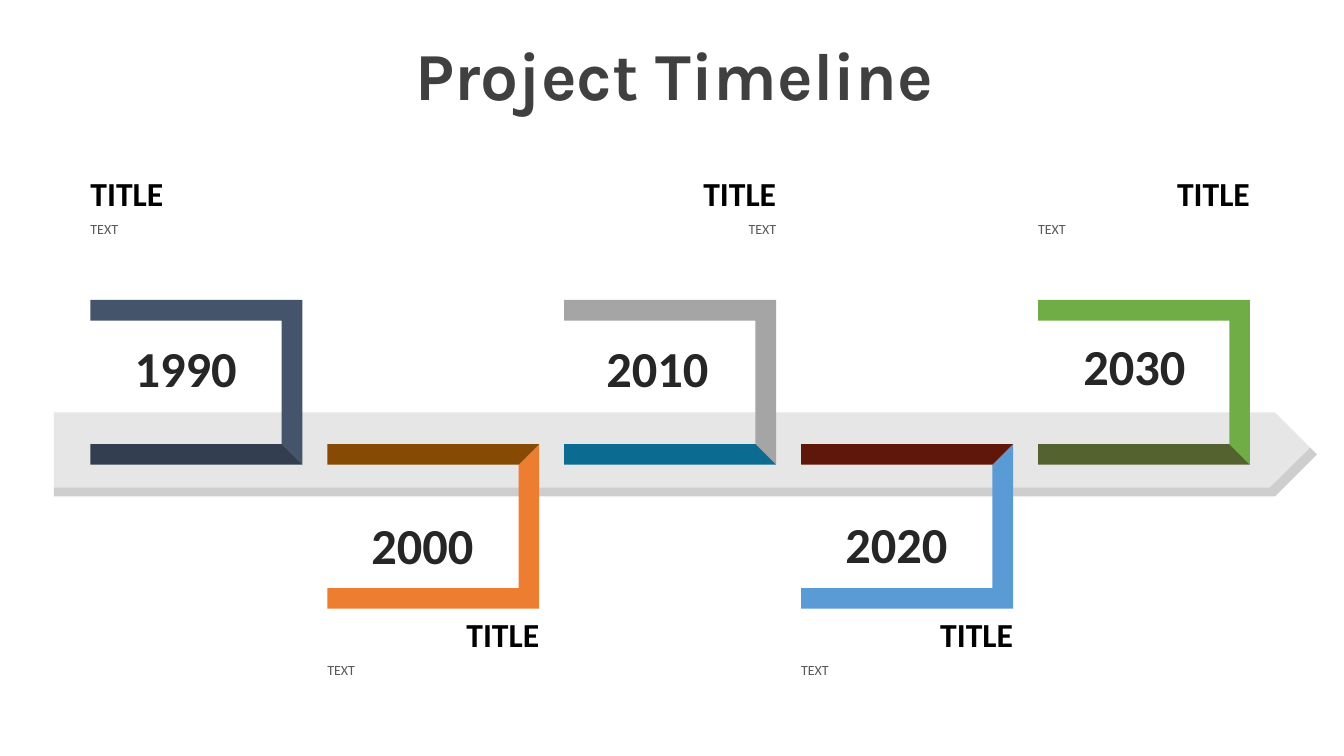
"""Build a project timeline slide with five folded brackets on an arrow."""
from lxml.etree import SubElement
from pptx import Presentation
from pptx.dml.color import RGBColor
from pptx.enum.shapes import MSO_SHAPE
from pptx.enum.text import MSO_ANCHOR, MSO_AUTO_SIZE, PP_ALIGN
from pptx.oxml.ns import qn
from pptx.util import Cm, Pt

COLORS = {
    "arrow": "E7E6E6", "shade": "000000", "heading": "000000",
    "title": "404040", "year": "262626", "body": "595959",
    "navy": "44546A", "navy_fold": "333F50",
    "orange": "ED7D31", "orange_fold": "864A04",
    "gray": "A5A5A5", "gray_fold": "0C6B90",
    "blue": "5B9BD5", "blue_fold": "60170B",
    "green": "70AD47", "green_fold": "53622E",
}
LEFT, RIGHT = PP_ALIGN.LEFT, PP_ALIGN.RIGHT
CENTER, JUSTIFY = PP_ALIGN.CENTER, PP_ALIGN.JUSTIFY

prs = Presentation()
prs.slide_width, prs.slide_height = Cm(33.87), Cm(19.05)
s = prs.slides.add_slide(prs.slide_layouts[5])


def add_text(text, at, sp=None, size=10, color="body", bold=False, font="Calibri",
             align=LEFT, anchor=MSO_ANCHOR.TOP, inset=0.0):
    """Write one line of text into a shape, or into a new text box."""
    box = [Cm(v) for v in at]
    if sp is None:
        sp = s.shapes.add_textbox(*box)
    sp.left, sp.top, sp.width, sp.height = box
    tf = sp.text_frame
    tf.word_wrap, tf.auto_size = True, MSO_AUTO_SIZE.NONE
    tf.vertical_anchor = anchor
    tf.margin_left = tf.margin_right = Cm(inset)
    tf.margin_top = tf.margin_bottom = Cm(0.13)
    p = tf.paragraphs[0]
    p.alignment = align
    r = p.add_run()
    r.text = text
    r.font.name, r.font.size, r.font.bold = font, Pt(size), bold
    r.font.color.rgb = RGBColor.from_string(COLORS[color])


def add_polygon(points, color):
    """Draw a filled closed outline through points in centimetres."""
    start, *rest = [(Cm(x), Cm(y)) for x, y in points]
    builder = s.shapes.build_freeform(*start, scale=1.0)
    builder.add_line_segments(rest, close=True)
    sp = builder.convert_to_shape()
    sp.shadow.inherit = False
    sp.fill.solid()
    sp.fill.fore_color.rgb = RGBColor.from_string(COLORS[color])
    sp.line.fill.background()
    return sp


add_text("Project Timeline", (3.61, 0.71, 26.77, 2.31), sp=s.shapes.title, size=48,
         color="title", bold=True, font="Karla", align=CENTER, inset=0.25)

arrow = s.shapes.add_shape(MSO_SHAPE.PENTAGON, Cm(1.36), Cm(10.39), Cm(31.83), Cm(2.12))
arrow.shadow.inherit = False
arrow.fill.solid()
arrow.fill.fore_color.rgb = RGBColor.from_string(COLORS["arrow"])
arrow.line.fill.background()

shade = add_polygon([(33.02, 11.28), (33.19, 11.45), (32.13, 12.51),
                     (1.36, 12.51), (1.36, 12.29), (32, 12.29)], "shade")
SubElement(shade.element.find(".//" + qn("a:srgbClr")), qn("a:alpha"), val="10000")

FIRST_X, PITCH = 2.28, 5.97
WIDTH, HEIGHT, BAR = 5.34, 4.15, 0.52
FOLD_TOP = 11.19
FOLD_BOTTOM = FOLD_TOP + BAR

milestones = [
    ("1990", "navy", LEFT, JUSTIFY, 3.12, 8.36),
    ("2000", "orange", RIGHT, JUSTIFY, 9.09, 12.83),
    ("2010", "gray", RIGHT, RIGHT, 15.01, 8.36),
    ("2020", "blue", RIGHT, JUSTIFY, 21.03, 12.8),
    ("2030", "green", RIGHT, JUSTIFY, 27.03, 8.31),
]
for i, (year, color, heading_align, body_align, year_x, year_y) in enumerate(milestones):
    x = FIRST_X + i * PITCH
    right = x + WIDTH
    inner = right - BAR
    if i % 2 == 0:
        heading_y = 4.24
        near, far, step = FOLD_BOTTOM, FOLD_BOTTOM - HEIGHT, BAR
    else:
        heading_y = 15.34
        near, far, step = FOLD_TOP, FOLD_TOP + HEIGHT, -BAR

    add_text("TITLE", (x, heading_y, WIDTH, 1.27), size=24, color="heading", bold=True,
             align=heading_align, anchor=MSO_ANCHOR.BOTTOM)
    add_text("TEXT", (x, heading_y + 1.19, WIDTH, 1.96), align=body_align)
    add_text(year, (year_x, year_y, 3.12, 1.8), size=36, color="year", bold=True,
             align=CENTER, anchor=MSO_ANCHOR.MIDDLE, inset=0.25)
    add_polygon([(x, far), (right, far), (right, near), (inner, near - step),
                 (inner, far + step), (x, far + step)], color)
    add_polygon([(x, near), (right, near), (inner, near - step), (x, near - step)],
                color + "_fold")

prs.save("out.pptx")
